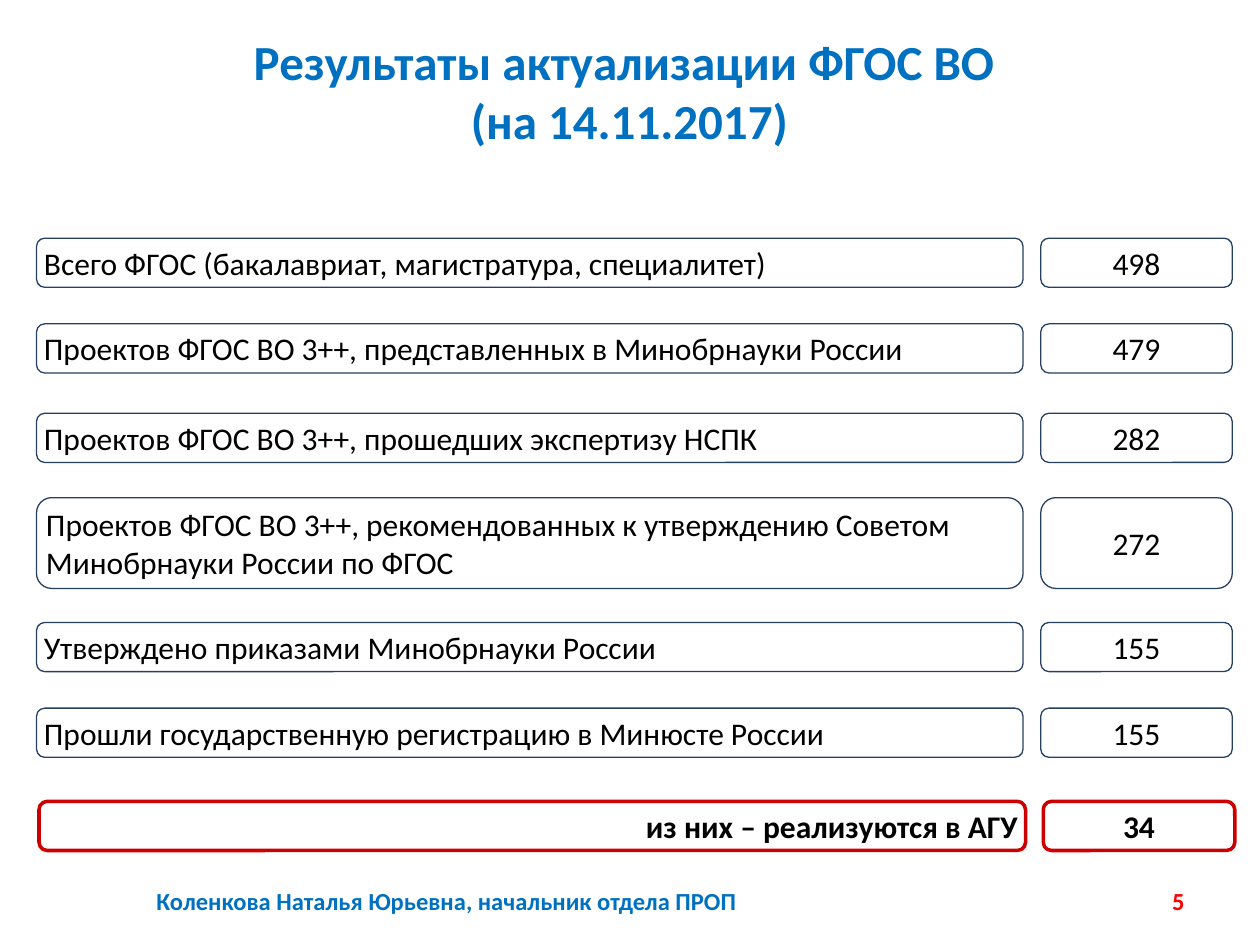
from pptx import Presentation
from pptx.dml.color import RGBColor
from pptx.enum.shapes import MSO_SHAPE
from pptx.enum.text import MSO_ANCHOR, MSO_AUTO_SIZE, PP_ALIGN
from pptx.util import Inches, Pt

COLORS = {
    "heading": "0070C0",
    "text": "000000",
    "box": "FFFFFF",
    "border": "254061",
    "accent": "CC0000",
    "page": "FF0000",
}

LABEL_LEFT, LABEL_WIDTH = 0.29, 7.83
COUNT_LEFT, COUNT_WIDTH = 8.26, 1.52
ROW_HEIGHT, TALL_ROW_HEIGHT = 0.39, 0.72
HIGHLIGHT_SHIFT = 0.02

# Top, height, label, count
RESULTS = [
    (1.89, ROW_HEIGHT, "Всего ФГОС (бакалавриат, магистратура, специалитет)", "498"),
    (2.57, ROW_HEIGHT, "Проектов ФГОС ВО 3++, представленных в Минобрнауки России", "479"),
    (3.28, ROW_HEIGHT, "Проектов ФГОС ВО 3++, прошедших экспертизу НСПК", "282"),
    (3.95, TALL_ROW_HEIGHT,
     "Проектов ФГОС ВО 3++, рекомендованных к утверждению Советом Минобрнауки России по ФГОС",
     "272"),
    (4.94, ROW_HEIGHT, "Утверждено приказами Минобрнауки России", "155"),
    (5.62, ROW_HEIGHT, "Прошли государственную регистрацию в Минюсте России", "155"),
]


def rgb(name):
    return RGBColor.from_string(COLORS[name])


def add_run(paragraph, text, size, color, bold=False):
    run = paragraph.add_run()
    run.text = text
    run.font.name = "Calibri"
    run.font.size = Pt(size)
    run.font.bold = bold
    run.font.color.rgb = rgb(color)


def add_title(slide, lines):
    title = slide.shapes.title
    title.left, title.top = Inches(0.75), Inches(0.21)
    title.width, title.height = Inches(8.49), Inches(1.02)
    frame = title.text_frame
    frame.auto_size = MSO_AUTO_SIZE.NONE
    frame.vertical_anchor = MSO_ANCHOR.MIDDLE
    paragraph = frame.paragraphs[0]
    paragraph.alignment = PP_ALIGN.CENTER
    for index, line in enumerate(lines):
        if index:
            paragraph.add_line_break()
        add_run(paragraph, line, 28, "heading", bold=True)


def add_box(slide, left, top, width, height, text, align, highlight=False):
    box = slide.shapes.add_shape(MSO_SHAPE.ROUNDED_RECTANGLE, Inches(left),
                                 Inches(top), Inches(width), Inches(height))
    box.shadow.inherit = False
    box.fill.solid()
    box.fill.fore_color.rgb = rgb("box")
    box.line.color.rgb = rgb("accent" if highlight else "border")
    box.line.width = Pt(2 if highlight else 0.75)
    frame = box.text_frame
    frame.word_wrap = True
    frame.vertical_anchor = MSO_ANCHOR.MIDDLE
    frame.margin_left = frame.margin_right = Inches(0.04)
    frame.margin_top = frame.margin_bottom = Inches(0.02)
    paragraph = frame.paragraphs[0]
    paragraph.alignment = align
    add_run(paragraph, text, 18, "text", bold=highlight)


def add_result(slide, top, height, label, count, highlight=False):
    shift = HIGHLIGHT_SHIFT if highlight else 0
    label_align = PP_ALIGN.RIGHT if highlight else PP_ALIGN.LEFT
    add_box(slide, LABEL_LEFT + shift, top, LABEL_WIDTH, height, label,
            label_align, highlight)
    add_box(slide, COUNT_LEFT + shift, top, COUNT_WIDTH, height, count,
            PP_ALIGN.CENTER, highlight)


def add_footer(slide, left, width, text, align, color):
    footer = slide.shapes.add_textbox(Inches(left), Inches(6.95),
                                      Inches(width), Inches(0.4))
    frame = footer.text_frame
    frame.word_wrap = True
    frame.vertical_anchor = MSO_ANCHOR.MIDDLE
    paragraph = frame.paragraphs[0]
    paragraph.alignment = align
    add_run(paragraph, text, 14, color, bold=True)


def main():
    presentation = Presentation()
    presentation.slide_width, presentation.slide_height = Inches(10), Inches(7.5)
    slide = presentation.slides.add_slide(presentation.slide_layouts[5])

    add_title(slide, ["Результаты актуализации ФГОС ВО ", "(на 14.11.2017)"])

    # Results, with the university's own share highlighted
    for top, height, label, count in RESULTS:
        add_result(slide, top, height, label, count)
    add_result(slide, 6.36, ROW_HEIGHT, "из них – реализуются в АГУ", "34",
               highlight=True)

    # Page number and author
    add_footer(slide, 7.17, 2.33, "5", PP_ALIGN.RIGHT, "page")
    add_footer(slide, 0.51, 6.07, "Коленкова Наталья Юрьевна, начальник отдела ПРОП",
               PP_ALIGN.CENTER, "heading")

    presentation.save("out.pptx")


if __name__ == "__main__":
    main()
